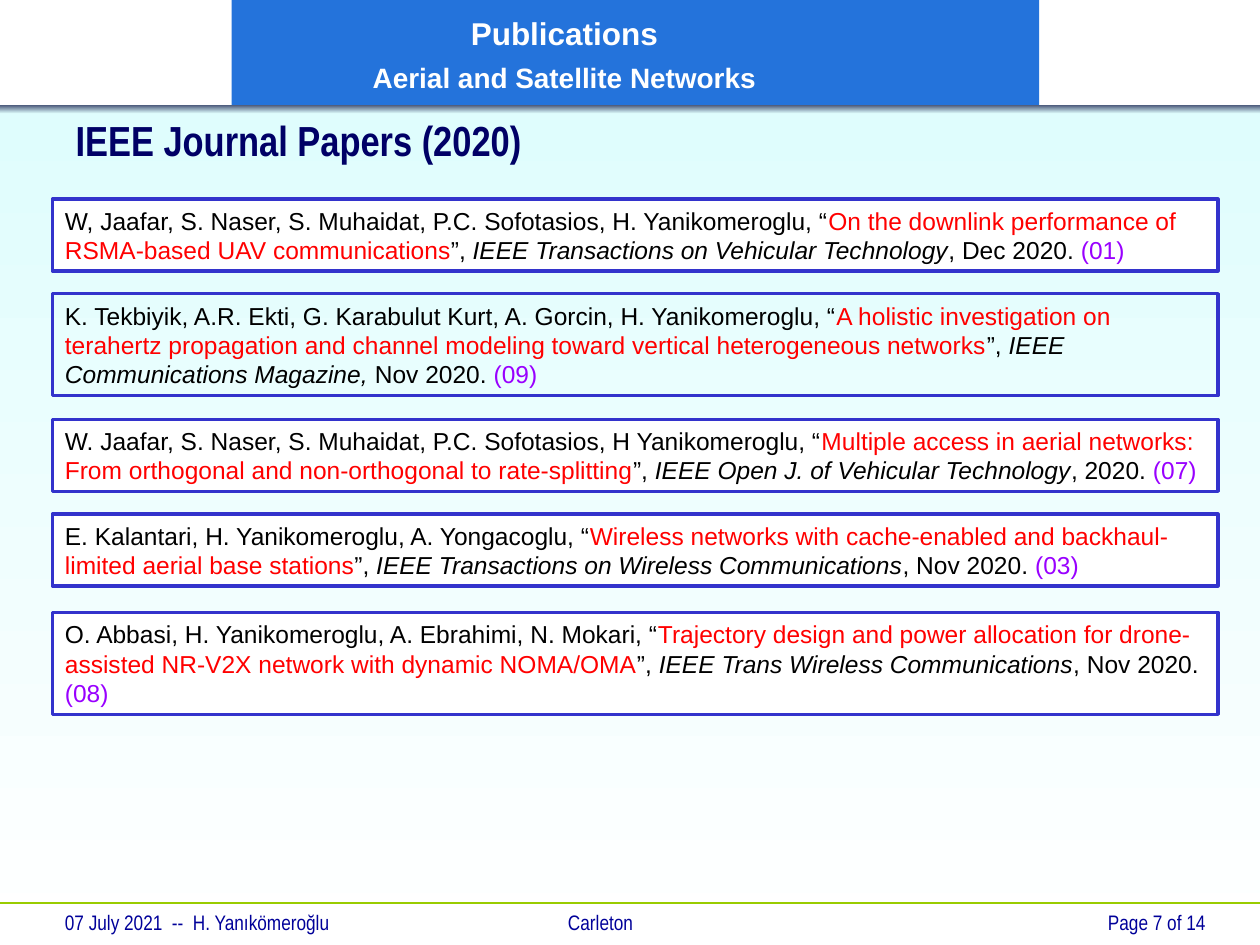
from pptx import Presentation
from pptx.dml.color import RGBColor
from pptx.enum.shapes import MSO_CONNECTOR, MSO_SHAPE
from pptx.enum.text import MSO_ANCHOR, MSO_AUTO_SIZE, PP_ALIGN
from pptx.oxml.ns import qn
from pptx.util import Pt
from lxml import etree

RECTANGLE = MSO_SHAPE.RECTANGLE
STRAIGHT = MSO_CONNECTOR.STRAIGHT
MIDDLE = MSO_ANCHOR.MIDDLE
NO_AUTOFIT = MSO_AUTO_SIZE.NONE
LEFT, CENTER, RIGHT = PP_ALIGN.LEFT, PP_ALIGN.CENTER, PP_ALIGN.RIGHT

WHITE = RGBColor(0xFF, 0xFF, 0xFF)
BLACK = RGBColor(0, 0, 0)
RED = RGBColor(0xFF, 0, 0)
PURPLE = RGBColor(0x99, 0, 0xFF)
BAND_BLUE = RGBColor(0x24, 0x73, 0xDB)
BORDER_BLUE = RGBColor(0x33, 0x33, 0xCC)
TITLE_NAVY = RGBColor(0, 0, 0x66)
FOOTER_NAVY = RGBColor(0, 0, 0x99)
LIME = RGBColor(0x99, 0xCC, 0)
PALE_CYAN = RGBColor(0xDF, 0xFD, 0xFD)
SLATE = RGBColor(0x47, 0x55, 0x77)

BODY_FONT = "Arial"
NARROW_FONT = "Arial Narrow"
WIDTH, HEIGHT = 720, 540
MARGIN, PAPER_WIDTH = 30, 666
TWO_LINES, THREE_LINES = 41, 58.3

PAPERS = [
    (113.8, TWO_LINES, True,
     "W, Jaafar, S. Naser, S. Muhaidat, P.C. Sofotasios, H. Yanikomeroglu, ",
     "On the downlink performance of RSMA-based UAV communications",
     "IEEE Transactions on Vehicular Technology", ", Dec 2020. ", "(01)"),
    (167.8, THREE_LINES, False,
     "K. Tekbiyik, A.R. Ekti, G. Karabulut Kurt, A. Gorcin, H. Yanikomeroglu, ",
     "A holistic investigation on terahertz propagation and channel modeling "
     "toward vertical heterogeneous networks",
     "IEEE Communications Magazine, ", "Nov 2020. ", "(09)"),
    (239.8, TWO_LINES, True,
     "W. Jaafar, S. Naser, S. Muhaidat, P.C. Sofotasios, H Yanikomeroglu, ",
     "Multiple access in aerial networks: From orthogonal and non-orthogonal "
     "to rate-splitting",
     "IEEE Open J. of Vehicular Technology", ", 2020. ", "(07)"),
    (293.8, TWO_LINES, True,
     "E. Kalantari, H. Yanikomeroglu, A. Yongacoglu, ",
     "Wireless networks with cache-enabled and backhaul-limited aerial base stations",
     "IEEE Transactions on Wireless Communications", ", Nov 2020. ", "(03)"),
    (349.9, THREE_LINES, True,
     "O. Abbasi, H. Yanikomeroglu, A. Ebrahimi, N. Mokari, ",
     "Trajectory design and power allocation for drone-assisted NR-V2X network "
     "with dynamic NOMA/OMA",
     "IEEE Trans Wireless Communications", ", Nov 2020. ", "(08)"),
]


def add_rectangle(slide, left, top, width, height):
    """Add a rectangle without shadow or outline."""
    rectangle = slide.shapes.add_shape(RECTANGLE, Pt(left), Pt(top), Pt(width), Pt(height))
    rectangle.shadow.inherit = False
    rectangle.line.fill.background()
    return rectangle


def add_gradient(slide, left, top, width, height, colors):
    """Add a rectangle shaded from the top colour to the bottom colour."""
    fill = add_rectangle(slide, left, top, width, height).fill
    fill.gradient()
    fill.gradient_angle = 270
    for stop, color, position in zip(fill.gradient_stops, colors, (0, 1)):
        stop.color.rgb = color
        stop.position = position


def set_font(paragraph, name, size, color, bold=False):
    """Format a whole paragraph."""
    font = paragraph.font
    font.name, font.size, font.bold = name, Pt(size), bold
    font.color.rgb = color


def add_header(slide, left, top, width, height):
    """Add the blue band with the section heading."""
    band = add_rectangle(slide, left, top, width, height)
    band.fill.solid()
    band.fill.fore_color.rgb = BAND_BLUE
    frame = band.text_frame
    frame.vertical_anchor = MIDDLE
    frame.margin_left, frame.margin_right = 0, Pt(81)
    frame.text = "Publications\nAerial and Satellite Networks"
    for paragraph, size in zip(frame.paragraphs, (18, 16)):
        paragraph.alignment = CENTER
        paragraph.line_spacing = 1.1
        set_font(paragraph, BODY_FONT, size, WHITE, bold=True)
    frame.paragraphs[1].space_before = Pt(3.2)


def add_title(slide, left, top, width, height):
    """Place and format the slide title."""
    title = slide.shapes.title
    title.left, title.top, title.width, title.height = map(Pt, (left, top, width, height))
    frame = title.text_frame
    frame.text = "IEEE Journal Papers (2020)"
    frame.auto_size = NO_AUTOFIT
    frame.vertical_anchor = MIDDLE
    frame.margin_top = frame.margin_bottom = 0
    frame.paragraphs[0].alignment = LEFT
    set_font(frame.paragraphs[0], NARROW_FONT, 24, TITLE_NAVY, bold=True)


def add_paper(slide, left, top, width, height, filled, citation):
    """Add one framed citation."""
    frame_box = add_rectangle(slide, left, top, width, height)
    if filled:
        frame_box.fill.solid()
        frame_box.fill.fore_color.rgb = WHITE
    else:
        frame_box.fill.background()
    frame_box.line.color.rgb = BORDER_BLUE
    frame_box.line.width = Pt(2)
    frame = frame_box.text_frame
    frame.word_wrap = True
    frame.vertical_anchor = MIDDLE
    paragraph = frame.paragraphs[0]
    paragraph.alignment = LEFT
    paragraph.font.name, paragraph.font.size = BODY_FONT, Pt(14)
    authors, paper, journal, date, count = citation
    for text, color, italic in (
        (authors + "“", BLACK, False),
        (paper, RED, False),
        ("”, ", BLACK, False),
        (journal, BLACK, True),
        (date, BLACK, False),
        (count, PURPLE, False),
    ):
        run = paragraph.add_run()
        run.text = text
        run.font.color.rgb = color
        run.font.italic = italic


def add_footer_text(slide, left, top, width, height, text, alignment, tab=None):
    """Add one footer line, with an optional tab stop."""
    frame = slide.shapes.add_textbox(Pt(left), Pt(top), Pt(width), Pt(height)).text_frame
    frame.word_wrap = True
    paragraph = frame.paragraphs[0]
    paragraph.text = text
    paragraph.alignment = alignment
    if tab:
        tabs = etree.SubElement(paragraph._p.get_or_add_pPr(), qn("a:tabLst"))
        etree.SubElement(tabs, qn("a:tab"), pos=str(Pt(tab)), algn="l")
    set_font(paragraph, NARROW_FONT, 12, FOOTER_NAVY)


def add_footer(slide, left, top, width):
    """Add the footer rule, date, author, place and page."""
    rule = slide.shapes.add_connector(STRAIGHT, Pt(left), Pt(top), Pt(left + width), Pt(top))
    rule.line.color.rgb = LIME
    rule.line.width = Pt(0.75)
    etree.SubElement(rule._element.spPr, qn("a:effectLst"))
    add_footer_text(slide, left + MARGIN, top, 450, 24,
                    "07 July 2021  --  H. Yanıkömeroğlu\tCarleton", LEFT, tab=287.5)
    add_footer_text(slide, left + width - 180, top, 156, 18, "Page 7 of 14", RIGHT)


def main():
    """Build the publications slide."""
    deck = Presentation()
    deck.slide_width, deck.slide_height = Pt(WIDTH), Pt(HEIGHT)
    slide = deck.slides.add_slide(deck.slide_layouts[5])
    add_gradient(slide, 0, 62, WIDTH, HEIGHT - 62, (PALE_CYAN, WHITE))
    add_footer(slide, 0, 516, WIDTH)
    add_gradient(slide, 0, 60, WIDTH, 5, (SLATE, PALE_CYAN))
    add_header(slide, 132.3, 0, 461.5, 60)
    slide.shapes._spTree.append(slide.shapes.title._element)
    add_title(slide, 36, 65, 498, 30)
    for top, height, filled, *citation in PAPERS:
        add_paper(slide, MARGIN, top, PAPER_WIDTH, height, filled, citation)
    deck.save("out.pptx")


if __name__ == "__main__":
    main()
